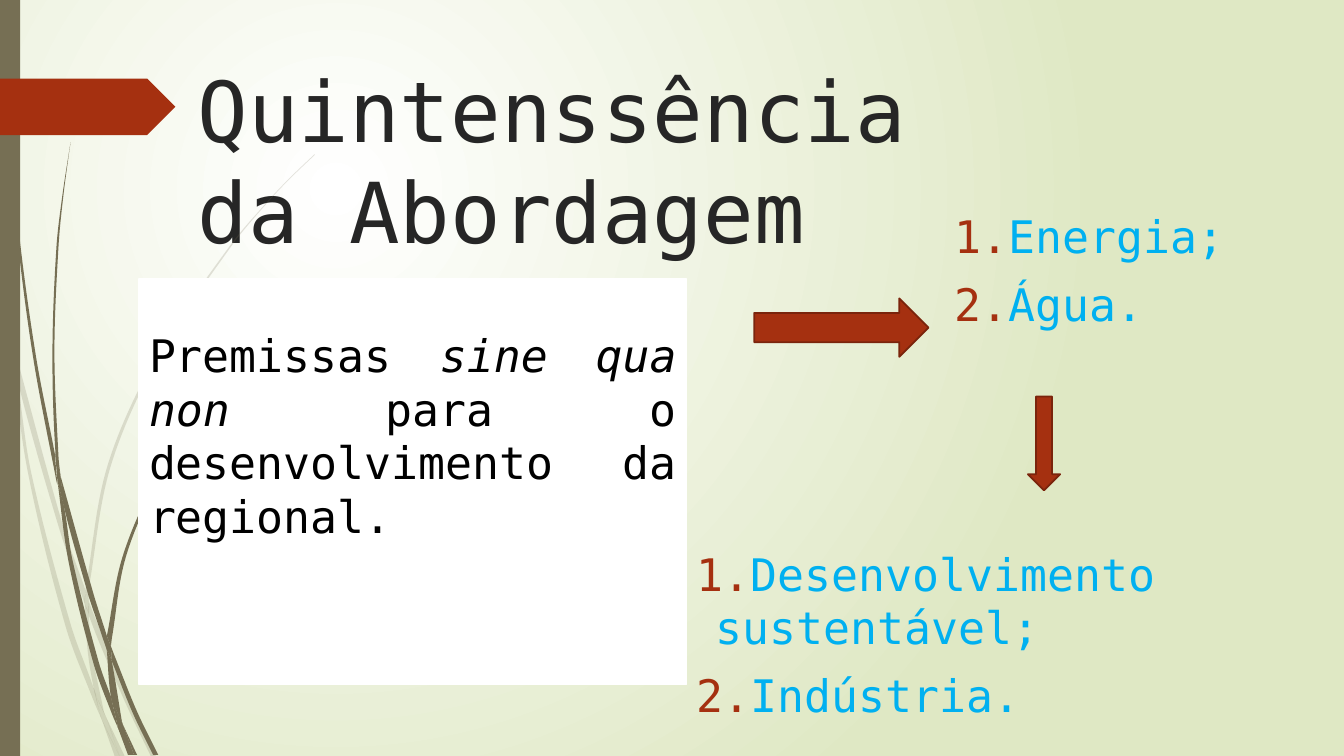
from dataclasses import dataclass
from math import dist

from lxml import etree
from pptx import Presentation
from pptx.dml.color import RGBColor
from pptx.enum.shapes import MSO_SHAPE
from pptx.enum.text import MSO_ANCHOR, MSO_AUTO_SIZE, PP_ALIGN
from pptx.oxml.ns import qn
from pptx.util import Inches, Pt

RECT, ARROW, TAG = MSO_SHAPE.RECTANGLE, MSO_SHAPE.RIGHT_ARROW, MSO_SHAPE.PENTAGON
TOP, LEFT, JUSTIFY = MSO_ANCHOR.TOP, PP_ALIGN.LEFT, PP_ALIGN.JUSTIFY
FIXED = MSO_AUTO_SIZE.NONE


@dataclass(frozen=True)
class Theme:
    """Colours, font and type sizes of the slide."""
    white: str = "FFFFFF"
    pale: str = "DFE8C4"
    olive: str = "766F54"
    rust: str = "A53010"
    edge: str = "7A240C"
    sky: str = "00B0F0"
    ink: str = "262626"
    black: str = "000000"
    font: str = "DejaVu Sans Mono"
    head: int = 60
    body: int = 32
    gap: int = 10
    rule: float = 1.25


LOOK = Theme()

FAINT = [
    ([(0.11, 3.5), (0.09, 3.22), (0, 2.82)], [(0, 2.99), (0.1, 3.44), (0.11, 3.5)]),
    ([(0.14, 3.45), (0.17, 3.76), (0.58, 5.22), (0.84, 5.99)],
     [(0.85, 5.86), (0.62, 5.2), (0.14, 3.45)]),
    ([(0.88, 5.96), (0.88, 6.1), (1.23, 6.94), (1.5, 7.51)],
     [(1.55, 7.51), (1.27, 6.92), (0.92, 6.07), (0.88, 5.96)]),
    ([(1.19, 7.51), (1.24, 7.51)], [(1.05, 7.11), (1.19, 7.51)]),
    ([(0.11, 3.5), (0.28, 4.7), (0.65, 6.21), (0.92, 6.93), (1.01, 7.14)],
     [(0.99, 7.07), (0.93, 6.83), (0.7, 6.19), (0.31, 4.69), (0.17, 3.76), (0.11, 3.5)]),
    ([(0.84, 5.99), (0.87, 6.46), (0.93, 6.83), (0.96, 6.92), (1.05, 7.11)],
     [(1.03, 7.06), (0.91, 6.46), (0.88, 6.1), (0.88, 6.08), (0.84, 5.99)]),
    ([(0.88, 5.84), (1.1, 4.62), (1.6, 3.49), (2.29, 2.45), (2.68, 1.98), (2.9, 1.75),
      (3.12, 1.54)],
     [(3.12, 1.53), (2.89, 1.75), (2.68, 1.97), (2.28, 2.44), (1.58, 3.48),
      (1.07, 4.61), (0.85, 5.84), (0.85, 5.86), (0.88, 5.96)]),
    ([(1.01, 7.14), (1.14, 7.51)], [(1.19, 7.51), (1.01, 7.14)]),
    ([(0.88, 6.08), (0.88, 6.1), (0.88, 5.96)], [(0.85, 5.86), (0.84, 5.99), (0.88, 6.08)]),
    ([(0.96, 6.92), (0.93, 6.83), (0.99, 7.07), (1.01, 7.14), (1.19, 7.51)],
     [(1.19, 7.51), (1.05, 7.11), (0.96, 6.92)]),
]
DARK = [
    ([(0.07, 1.1), (0.17, 2.33), (0.33, 3.55), (0.56, 4.77), (0.57, 4.81)],
     [(0.55, 4.57), (0.55, 4.53), (0.36, 3.55), (0.19, 2.32), (0.08, 1.09),
      (0.05, 0.48), (0.03, 0)], [(0.03, 0), (0.03, 0.48), (0.07, 1.1)]),
    ([(0.88, 5.92), (1.06, 6.45)], [(1.06, 6.33), (1.06, 6.31), (0.93, 5.9), (0.6, 4.72)],
     [(0.6, 4.72), (0.64, 5.05), (0.88, 5.92)]),
    ([(1.13, 6.49), (1.1, 6.41)], [(1.11, 6.56), (1.32, 7.08), (1.52, 7.49)],
     [(1.57, 7.49), (1.36, 7.06), (1.13, 6.49)]),
    ([(1.1, 6.91), (0.98, 6.57), (0.72, 5.56), (0.64, 5.05), (0.57, 4.77)],
     [(0.57, 4.77), (0.68, 5.57), (0.93, 6.59), (1.11, 7.08), (1.17, 7.22)],
     [(1.16, 7.17), (1.1, 6.91)]),
    ([(0.6, 4.72), (0.58, 4.53), (0.54, 3.49), (0.58, 2.45), (0.63, 1.93), (0.7, 1.41)],
     [(0.7, 1.41), (0.62, 1.93), (0.56, 2.45), (0.52, 3.49), (0.55, 4.49), (0.6, 4.72)]),
    ([(1.33, 7.49), (1.36, 7.49)], [(1.22, 7.19), (1.33, 7.49)]),
    ([(0.57, 4.77), (0.64, 5.05)], [(0.6, 4.72), (0.55, 4.49)],
     [(0.55, 4.53), (0.57, 4.77)]),
    ([(1.11, 6.33), (1.25, 5.52), (1.58, 4.76), (2.05, 4.06), (2.31, 3.74), (2.46, 3.59),
      (2.61, 3.44)],
     [(2.6, 3.44), (2.45, 3.58), (2.31, 3.73), (2.04, 4.05), (1.56, 4.74), (1.22, 5.51),
      (1.06, 6.31)], [(1.1, 6.41), (1.11, 6.33)]),
    ([(1.17, 7.22), (1.27, 7.49)], [(1.31, 7.49), (1.17, 7.22)]),
    ([(1.06, 6.45), (1.1, 6.91), (1.16, 7.06), (1.22, 7.19)],
     [(1.21, 7.16), (1.11, 6.56), (1.09, 6.51), (1.06, 6.45)]),
    ([(1.06, 6.45), (1.09, 6.51), (1.11, 6.56)], [(1.1, 6.41), (1.06, 6.31)],
     [(1.06, 6.33), (1.06, 6.45)]),
    ([(1.16, 7.06), (1.1, 6.91)], [(1.16, 7.17), (1.17, 7.22), (1.3, 7.49)],
     [(1.33, 7.49), (1.22, 7.19), (1.16, 7.06)]),
]


def tint(code):
    """Return the colour for a hex code."""
    return RGBColor.from_string(code)


def node(root, tag, **vals):
    """Append a drawing element with its attributes."""
    return etree.SubElement(root, qn(tag), vals)


def apply(item, vals):
    """Set each named attribute on an item."""
    for name, val in vals.items():
        setattr(item, name, val)


def paint(shape, fill, line=None):
    """Give a shape a flat fill and an optional outline."""
    shape.shadow.inherit = False
    shape.fill.solid()
    shape.fill.fore_color.rgb = tint(fill)
    if line:
        shape.line.color.rgb = tint(line)
        shape.line.width = Pt(LOOK.rule)
    else:
        shape.line.fill.background()


def block(slide, kind, box, fill, line=None, turn=0):
    """Add a preset shape."""
    shape = slide.shapes.add_shape(kind, *map(Inches, box))
    paint(shape, fill, line)
    shape.rotation = turn
    return shape


def lean(p, a, b, size):
    """Move a point along the direction from a to b."""
    span = dist(a, b) or 1
    return tuple(u + (w - v) * size / span for u, v, w in zip(p, a, b))


def bend(pts):
    """Return two handles and an end for each smooth step."""
    ends = [pts[0], *pts, pts[-1]]
    out = []
    for a, b, c, d in zip(ends, ends[1:], ends[2:], ends[3:]):
        size = dist(b, c) / 3
        out += [lean(b, a, c, size), lean(c, d, b, size), c]
    return out


def blade(slide, edges, alpha=None):
    """Draw a piece of grass bounded by curved edges."""
    pts = [edges[0][0]]
    for edge in edges:
        if pts[-1] != edge[0]:
            pts += bend([pts[-1], edge[0]])
        pts += bend(edge)
    pts = [(Inches(x), Inches(y)) for x, y in pts]
    pen = slide.shapes.build_freeform(*pts[0])
    pen.add_line_segments(pts[1:], close=True)
    shape = pen.convert_to_shape()
    paint(shape, LOOK.olive)
    lines = shape.element.findall(".//" + qn("a:lnTo"))
    for trio in zip(*[iter(lines)] * 3):
        arc = etree.Element(qn("a:cubicBezTo"))
        trio[0].addprevious(arc)
        for line in trio:
            arc.append(line[0])
            line.getparent().remove(line)
    if alpha:
        node(shape.element.spPr.find(".//" + qn("a:srgbClr")), "a:alpha", val=str(alpha * 1000))


def write(para, text, size, code, italic=False):
    """Add a run of text to a paragraph."""
    run = para.add_run()
    run.text = text
    apply(run.font, {"name": LOOK.font, "size": Pt(size), "italic": italic})
    run.font.color.rgb = tint(code)


def setup(frame, top=0.05):
    """Set wrapping, anchor and top inset of a text frame."""
    apply(frame, {"word_wrap": True, "auto_size": FIXED,
                  "vertical_anchor": TOP, "margin_top": Inches(top)})


def steps(slide, box, items):
    """Add a numbered list."""
    frame = slide.shapes.add_textbox(*map(Inches, box)).text_frame
    setup(frame)
    for i, text in enumerate(items):
        para = frame.add_paragraph() if i else frame.paragraphs[0]
        para.space_before = Pt(LOOK.gap)
        write(para, text, LOOK.body, LOOK.sky)
        props = para._p.get_or_add_pPr()
        for name, val in {"marL": 0.19, "indent": -0.19}.items():
            props.set(name, str(Inches(val)))
        node(node(props, "a:buClr"), "a:srgbClr", val=LOOK.rust)
        node(props, "a:buAutoNum", type="arabicPeriod")


def backdrop(slide):
    """Fill the background with a radial gradient."""
    fill = slide.background.fill
    fill.gradient()
    for stop, code, pos in zip(fill.gradient_stops, (LOOK.white, LOOK.pale), (0, 1)):
        stop.color.rgb = tint(code)
        stop.position = pos
    lin = slide.element.find(".//" + qn("a:lin"))
    grad = lin.getparent()
    grad.remove(lin)
    node(node(grad, "a:path", path="circle"), "a:fillToRect",
         l="50000", t="50000", r="100000", b="100000")


def heading(slide, text, box):
    """Place and format the title."""
    title = slide.shapes.title
    apply(title, dict(zip(("left", "top", "width", "height"), map(Inches, box))))
    setup(title.text_frame)
    para = title.text_frame.paragraphs[0]
    para.alignment = LEFT
    write(para, text, LOOK.head, LOOK.ink)


def premise(slide, box):
    """Add the white panel with the premise."""
    frame = block(slide, RECT, box, LOOK.white, LOOK.white).text_frame
    setup(frame, 0.48)
    para = frame.paragraphs[0]
    para.alignment = JUSTIFY
    for text, italic in (("Premissas ", False), ("sine qua non ", True),
                         ("para o desenvolvimento da regional.", False)):
        write(para, text, LOOK.body, LOOK.black, italic)


def main():
    """Build and save the slide."""
    deck = Presentation()
    apply(deck, {"slide_width": Inches(13.33), "slide_height": Inches(7.5)})
    slide = deck.slides.add_slide(deck.slide_layouts[5])
    backdrop(slide)
    for group, alpha in ((FAINT, 20), (DARK, None)):
        for edges in group:
            blade(slide, edges, alpha)
    block(slide, RECT, (0, 0, 0.2, 7.5), LOOK.olive)
    block(slide, TAG, (-0.01, 0.78, 1.75, 0.56), LOOK.rust)
    heading(slide, "Quintenssência da Abordagem", (1.86, 0.53, 8.49, 1.15))
    steps(slide, (9.37, 2.02, 3.3, 1.73), ("Energia;", "Água."))
    premise(slide, (1.38, 2.77, 5.43, 4.02))
    block(slide, ARROW, (7.48, 2.96, 1.73, 0.58), LOOK.rust, LOOK.edge)
    block(slide, ARROW, (9.89, 4.24, 0.93, 0.32), LOOK.rust, LOOK.edge, 90)
    steps(slide, (6.81, 5.37, 6.32, 1.41), ("Desenvolvimento sustentável;", "Indústria."))
    deck.save("out.pptx")


if __name__ == "__main__":
    main()
